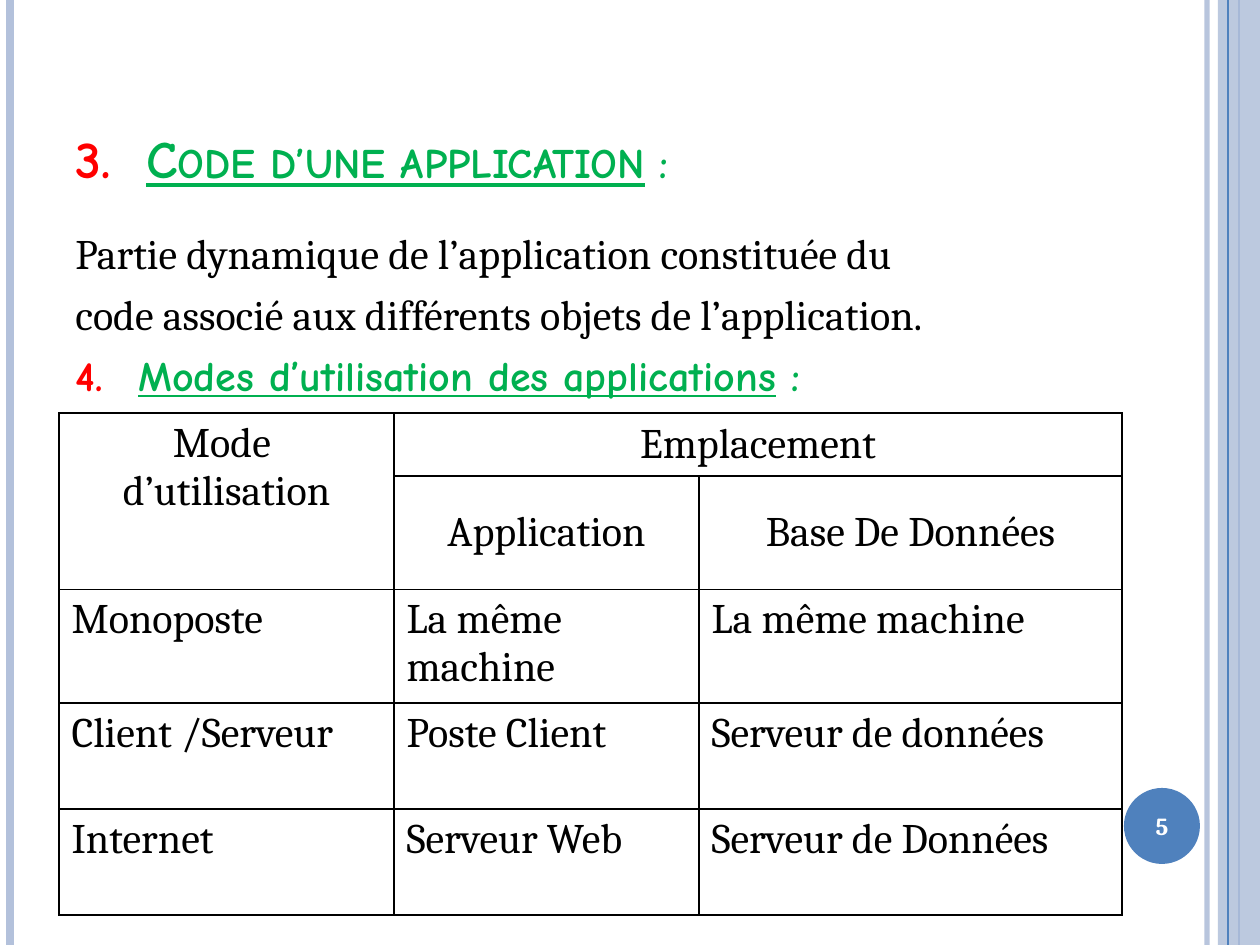
import pptx
import pptx.util
import pptx.dml.color
import pptx.enum.shapes
import pptx.enum.text
import pptx.oxml
import pptx.oxml.ns
import lxml.etree

SERIF = "Cambria"
COMIC = "Comic Neue"
BLACK, WHITE, GREEN, RED = "000000", "FFFFFF", "00B050", "FF0000"
BLUE, PALE = "4F81BD", "B3C1DB"
ALIGN = pptx.enum.text.PP_ALIGN
ANCHOR = pptx.enum.text.MSO_ANCHOR
SHAPE = pptx.enum.shapes.MSO_SHAPE


def px(length):
    return pptx.util.Emu(round(length * 914400 / 126))


def color(value):
    return pptx.dml.color.RGBColor.from_string(value)


def child(parent, tag, **attributes):
    element = lxml.etree.SubElement(parent, pptx.oxml.ns.qn(tag))
    for name, value in attributes.items():
        element.set(name, str(value))
    return element


def set_alpha(fill_parent, percent):
    value = next(fill_parent.iter(pptx.oxml.ns.qn("a:srgbClr")))
    child(value, "a:alpha", val=percent * 1000)


def add_span(para, text, size=24, font=SERIF, ink=BLACK, bold=False,
             underline=False, small_caps=False):
    span = para.add_run()
    span.text = text
    span.font.size = pptx.util.Pt(size)
    span.font.name = font
    span.font.bold = bold
    span.font.underline = underline
    span.font.color.rgb = color(ink)
    if small_caps:
        span.font._element.set("cap", "small")


def number_para(para, start, indent):
    properties = para._p.get_or_add_pPr()
    properties.set("marL", str(px(indent)))
    properties.set("indent", str(-px(indent)))
    child(child(properties, "a:buClr"), "a:srgbClr", val=RED)
    child(properties, "a:buAutoNum", type="arabicPeriod", startAt=start)


def add_heading(para, text, start, indent, **style):
    number_para(para, start, indent)
    style = dict(font=COMIC, ink=GREEN, bold=True, **style)
    add_span(para, text, underline=True, **style)
    add_span(para, " :", **style)


def add_box(page, left, top, width, height, anchor=ANCHOR.TOP):
    box = page.shapes.add_textbox(px(left), px(top), px(width), px(height))
    box.text_frame.word_wrap = True
    box.text_frame.vertical_anchor = anchor
    return box.text_frame


def add_rule(page, x, weight, ink, alpha=100):
    rule = page.shapes.add_connector(
        pptx.enum.shapes.MSO_CONNECTOR.STRAIGHT, px(x), 0, px(x), px(945))
    rule.line.width = pptx.util.Pt(weight)
    rule.line.color.rgb = color(ink)
    if alpha < 100:
        set_alpha(rule._element.spPr, alpha)
    child(rule._element.spPr, "a:effectLst")


def add_block(page, kind, left, top, width, height, ink, alpha=100):
    block = page.shapes.add_shape(kind, px(left), px(top), px(width), px(height))
    block.shadow.inherit = False
    block.fill.solid()
    block.fill.fore_color.rgb = color(ink)
    block.line.fill.background()
    if alpha < 100:
        set_alpha(block._element.spPr, alpha)


def add_frame(page):
    add_rule(page, 1207, 3, PALE, alpha=93)
    add_rule(page, 10, 4.5, PALE)
    add_rule(page, 1239, 1.5, BLUE)
    add_block(page, SHAPE.RECTANGLE, 1218, 0, 42, 945, PALE, alpha=87)
    add_rule(page, 1228, 0.75, BLUE)
    add_block(page, SHAPE.OVAL, 1124, 788, 76, 76, BLUE)


def border_cell(cell):
    properties = cell._tc.get_or_add_tcPr()
    for index, side in enumerate(("a:lnL", "a:lnR", "a:lnT", "a:lnB")):
        line = child(properties, side, w=pptx.util.Pt(1))
        child(child(line, "a:solidFill"), "a:srgbClr", val=BLACK)
        properties.insert(index, line)


def fill_cell(cell, text, header):
    for index, line in enumerate(text.split("\n")):
        frame = cell.text_frame
        para = frame.add_paragraph() if index else frame.paragraphs[0]
        para.alignment = ALIGN.CENTER if header else ALIGN.LEFT
        add_span(para, line)


def add_modes_table(page):
    rows = [
        ["Mode \nd’utilisation", "Emplacement", None],
        [None, "Application", "Base De Données"],
        ["Monoposte", "La même machine", "La même machine"],
        ["Client /Serveur", "Poste Client", "Serveur de données"],
        ["Internet", "Serveur Web", "Serveur de Données"],
    ]
    widths = [335, 305, 423]
    heights = [61, 109, 110, 106, 106]
    table = page.shapes.add_table(
        len(rows), len(widths), px(59), px(413),
        px(sum(widths)), px(sum(heights))).table
    table.first_row = table.horz_banding = False
    for column, width in zip(table.columns, widths):
        column.width = px(width)
    for row, height in zip(table.rows, heights):
        row.height = px(height)
    for r, texts in enumerate(rows):
        for c, text in enumerate(texts):
            cell = table.cell(r, c)
            cell.fill.background()
            border_cell(cell)
            if text:
                fill_cell(cell, text, header=r < 2)
            if r < 2 and c > 0:
                cell.vertical_anchor = ANCHOR.MIDDLE
    table.cell(0, 0).merge(table.cell(1, 0))
    table.cell(0, 1).merge(table.cell(0, 2))


def add_body(page):
    frame = add_box(page, 63, 221, 1029, 672)
    lines = ["Partie dynamique de l’application constituée du",
             "code associé aux différents objets de l’application."]
    para = frame.paragraphs[0]
    for line in lines:
        para.space_before = pptx.util.Pt(6)
        add_span(para, line)
        para = frame.add_paragraph()
    para.space_before = pptx.util.Pt(6)
    add_heading(para, "Modes d’utilisation des applications", 4, 63)


def main():
    deck = pptx.Presentation()
    deck.slide_width, deck.slide_height = px(1260), px(945)
    page = deck.slides.add_slide(deck.slide_layouts[6])
    page.background.fill.solid()
    page.background.fill.fore_color.rgb = color(WHITE)
    add_frame(page)
    title = add_box(page, 63, 38, 1029, 157, ANCHOR.BOTTOM)
    add_heading(title.paragraphs[0], "Code d’une application", 3, 71,
                size=30, small_caps=True)
    add_body(page)
    number = add_box(page, 1120, 790, 84, 72, ANCHOR.MIDDLE).paragraphs[0]
    number.alignment = ALIGN.CENTER
    add_span(number, "5", size=14, ink=WHITE, bold=True)
    add_modes_table(page)
    deck.save("out.pptx")


if __name__ == "__main__":
    main()
